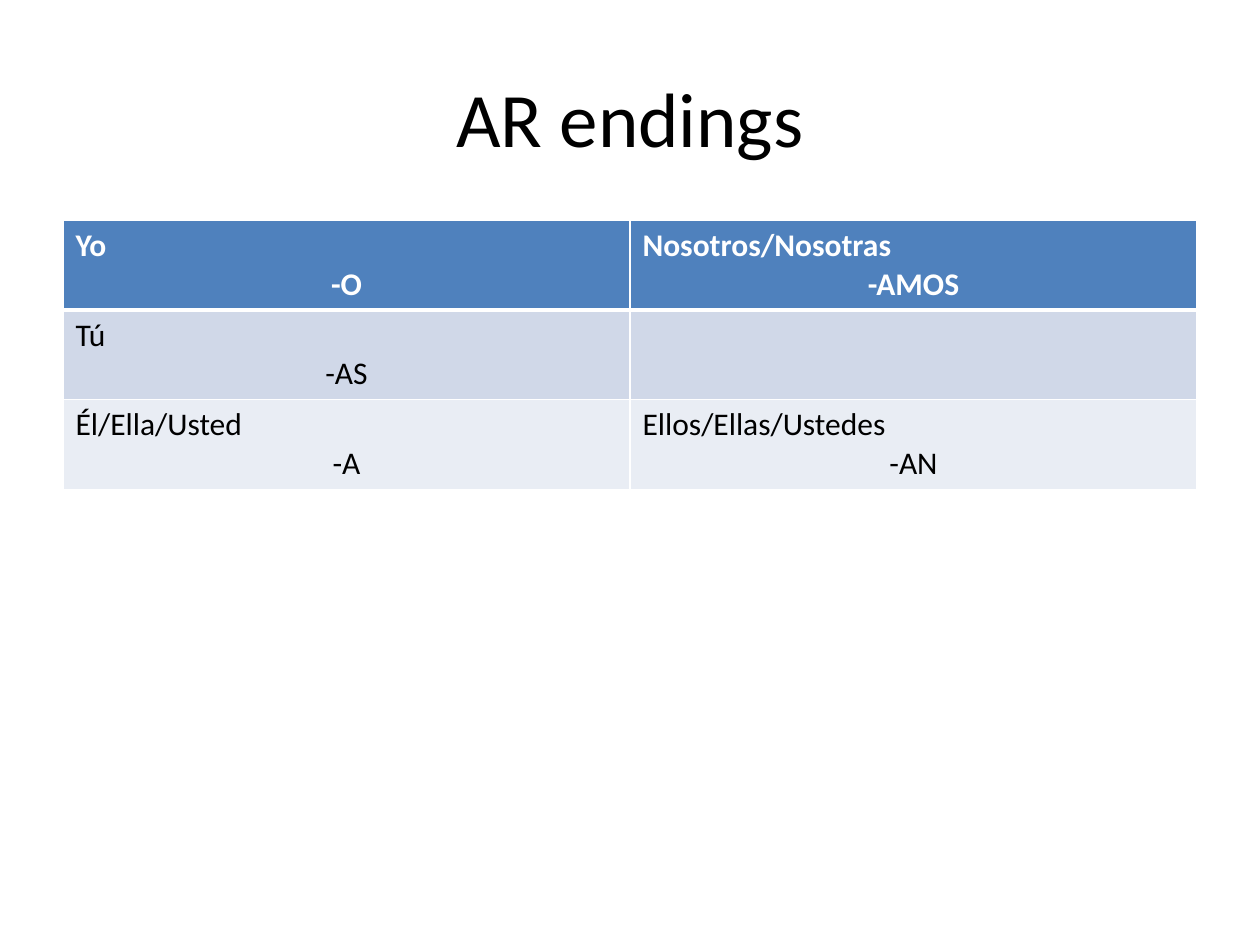
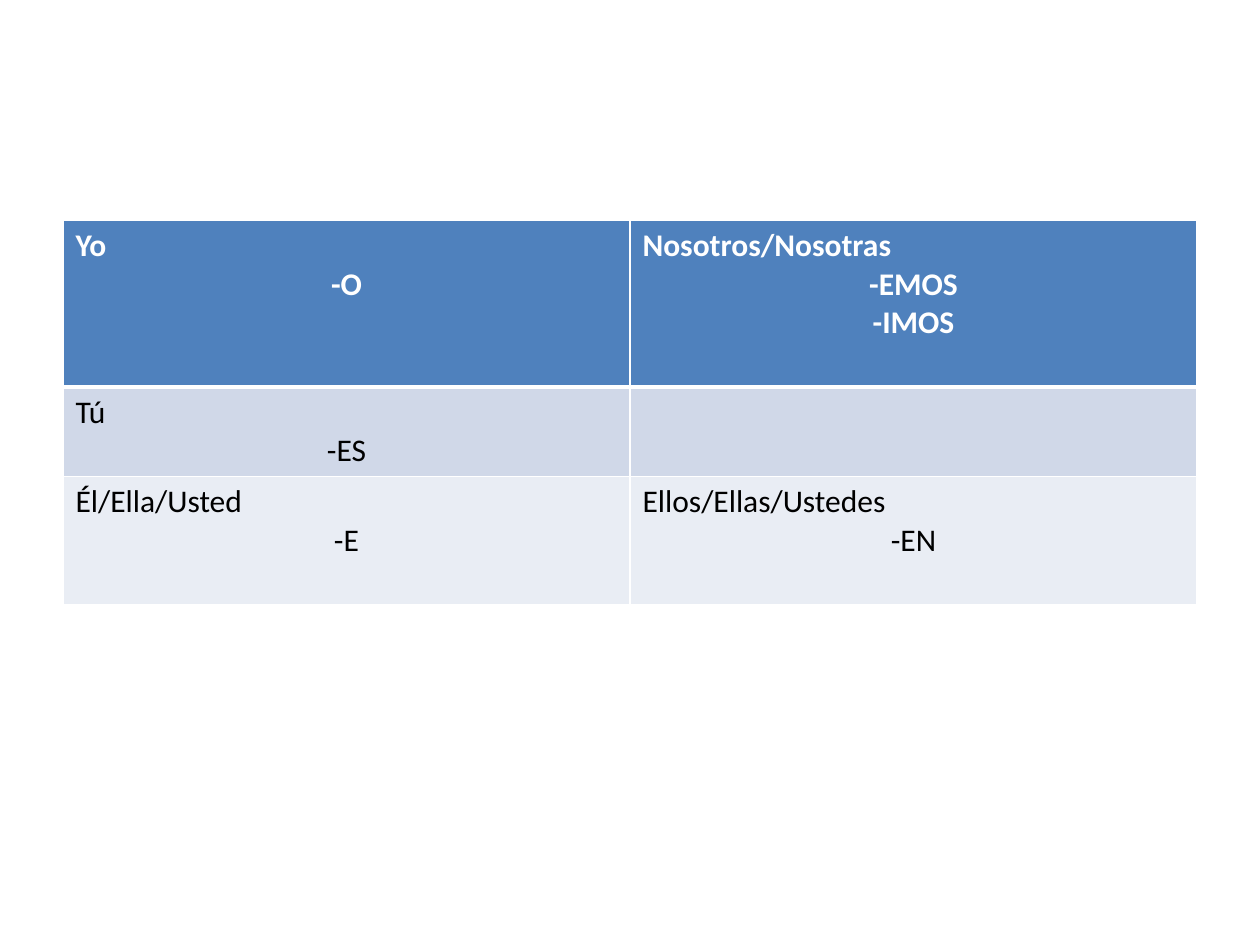
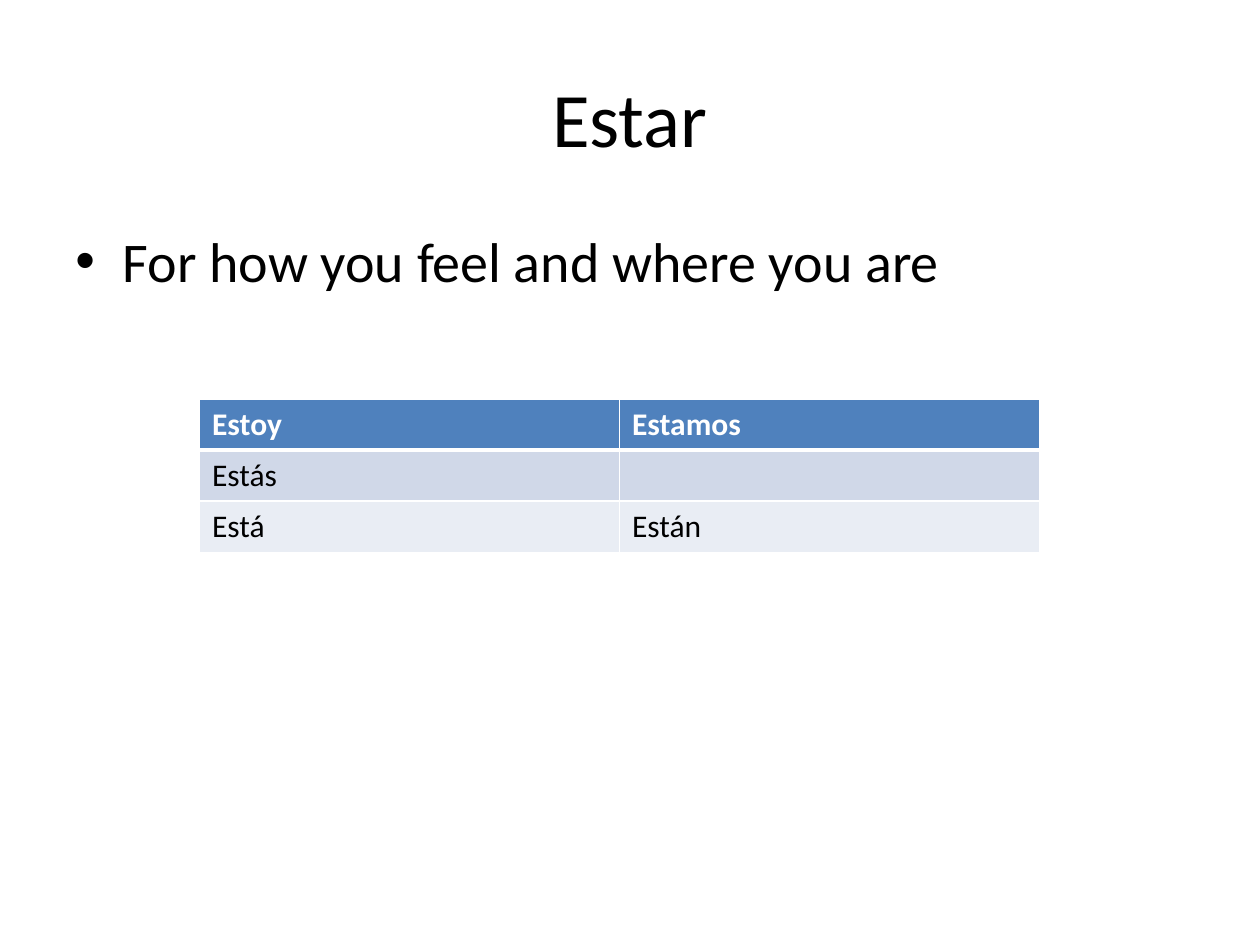
"""Build three slides of Spanish verb endings."""
from dataclasses import dataclass

from lxml.etree import SubElement
from pptx import Presentation
from pptx.dml.color import RGBColor as Color
from pptx.enum.text import MSO_ANCHOR as Anchor, PP_ALIGN as Align
from pptx.oxml.ns import qn
from pptx.util import Pt

SLIDES = [
    {
        "title": "AR endings",
        "table_box": (36, 126, 648),
        "row_lines": (2, 2, 2),
        "rows": [
            [("Yo", "-O"), ("Nosotros/Nosotras", "-AMOS")],
            [("Tú", "-AS"), ()],
            [("Él/Ella/Usted", "-A"), ("Ellos/Ellas/Ustedes", "-AN")],
        ],
    },
    {
        "table_box": (36, 126, 648),
        "row_lines": (4, 2, 3),
        "rows": [
            [("Yo", "-O"), ("Nosotros/Nosotras", "-EMOS", "-IMOS")],
            [("Tú", "-ES"), ()],
            [("Él/Ella/Usted", "-E"), ("Ellos/Ellas/Ustedes", "-EN")],
        ],
    },
    {
        "title": "Estar",
        "bullet": "For how you feel and where you are",
        "table_box": (114, 228, 480),
        "row_lines": (1, 1, 1),
        "rows": [
            [("Estoy",), ("Estamos",)],
            [("Estás",), ()],
            [("Está",), ("Están",)],
        ],
    },
]
TITLE_BOX = (36, 21.6, 648, 90)
BODY_BOX = (36, 126, 648, 356.4)
LINE_HEIGHT = 22
CELL_PADDING = 7.2
BULLET_INDENT = 27


@dataclass(frozen=True)
class Theme:
    font: str = "Calibri"
    text: str = "000000"
    light: str = "FFFFFF"
    row_fills: tuple = ("4F81BD", "D0D8E8", "E9EDF4")
    title_size: int = 44
    body_size: int = 32
    table_size: int = 18
    thin: int = 1
    thick: int = 3


THEME = Theme()


def style_paragraph(paragraph, size, color=THEME.text, bold=False, align=Align.LEFT):
    paragraph.alignment = align
    for run in paragraph.runs:
        font = run.font
        font.name, font.size, font.bold = THEME.font, Pt(size), bold
        font.color.rgb = Color.from_string(color)


def add_text(slide, box, text, size, align=Align.LEFT, anchor=Anchor.TOP):
    text_frame = slide.shapes.add_textbox(*map(Pt, box)).text_frame
    text_frame.word_wrap = True
    text_frame.vertical_anchor = anchor
    text_frame.text = text
    paragraph = text_frame.paragraphs[0]
    style_paragraph(paragraph, size, align=align)
    return paragraph


def add_bullet(slide, text):
    paragraph = add_text(slide, BODY_BOX, text, THEME.body_size)
    paragraph.space_before = Pt(THEME.body_size * 0.2)
    properties = paragraph._p.get_or_add_pPr()
    properties.set("marL", str(Pt(BULLET_INDENT)))
    properties.set("indent", str(-Pt(BULLET_INDENT)))
    SubElement(properties, qn("a:buFont"), typeface="Arial")
    SubElement(properties, qn("a:buChar"), char="•")


def set_borders(cell, row_index):
    thick_side = {0: "lnB", 1: "lnT"}.get(row_index)
    properties = cell._tc.get_or_add_tcPr()
    for side in ("lnL", "lnR", "lnT", "lnB"):
        width = THEME.thick if side == thick_side else THEME.thin
        line = SubElement(properties, qn(f"a:{side}"), w=str(Pt(width)))
        fill = SubElement(line, qn("a:solidFill"))
        SubElement(fill, qn("a:srgbClr"), val=THEME.light)


def fill_cell(cell, lines, row_index):
    is_header = row_index == 0
    set_borders(cell, row_index)
    cell.fill.solid()
    cell.fill.fore_color.rgb = Color.from_string(THEME.row_fills[row_index])
    cell.text_frame.text = "\n".join(lines)
    for index, paragraph in enumerate(cell.text_frame.paragraphs):
        style_paragraph(
            paragraph,
            THEME.table_size,
            THEME.light if is_header else THEME.text,
            is_header,
            Align.CENTER if index else Align.LEFT,
        )


def add_verb_table(slide, box, rows, row_lines):
    left, top, width = box
    heights = [CELL_PADDING + LINE_HEIGHT * count for count in row_lines]
    table = slide.shapes.add_table(
        len(rows), len(rows[0]), Pt(left), Pt(top), Pt(width), Pt(sum(heights))
    ).table
    for row_index, (row, height) in enumerate(zip(rows, heights)):
        table.rows[row_index].height = Pt(height)
        for column_index, lines in enumerate(row):
            fill_cell(table.cell(row_index, column_index), lines, row_index)


def main():
    presentation = Presentation()
    presentation.slide_width, presentation.slide_height = Pt(720), Pt(540)
    for content in SLIDES:
        slide = presentation.slides.add_slide(presentation.slide_layouts[6])
        if "title" in content:
            add_text(slide, TITLE_BOX, content["title"], THEME.title_size,
                     Align.CENTER, Anchor.MIDDLE)
        if "bullet" in content:
            add_bullet(slide, content["bullet"])
        add_verb_table(slide, content["table_box"], content["rows"], content["row_lines"])
    presentation.save("out.pptx")


if __name__ == "__main__":
    main()
